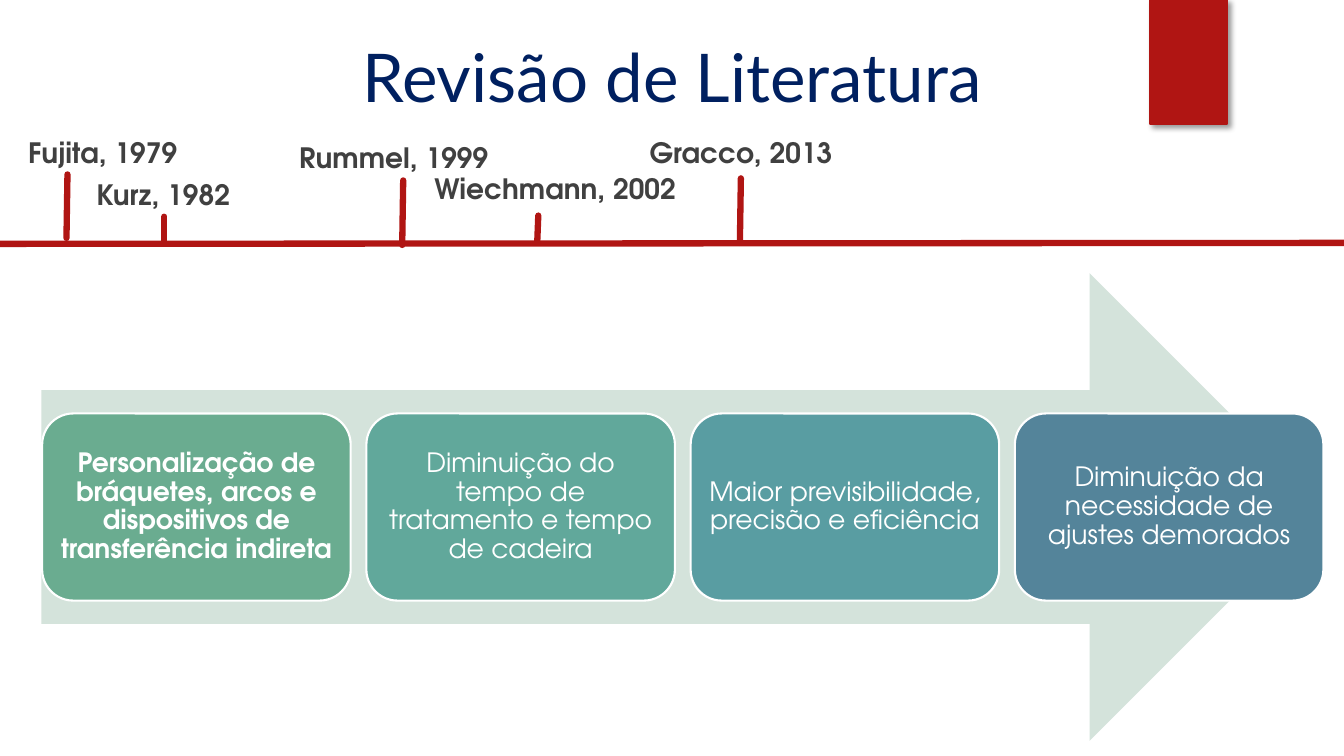
import pptx
import pptx.util
import pptx.dml.color
import pptx.enum.shapes
import pptx.enum.text
import pptx.oxml
import pptx.oxml.ns

Pt = pptx.util.Pt
KIND = pptx.enum.shapes.MSO_SHAPE
ALIGN = pptx.enum.text.PP_ALIGN
MIDDLE = pptx.enum.text.MSO_ANCHOR.MIDDLE
FIT = pptx.enum.text.MSO_AUTO_SIZE.SHAPE_TO_FIT_TEXT
FONT = "TeX Gyre Adventor"
HUES = {
    "title": "002060", "red": "B01513", "label": "404040",
    "arrow": "D4E3DB", "white": "FFFFFF",
}
EVENTS = [
    ("Fujita, 1979", 13, 92.9, 145, ALIGN.LEFT, (47.5, 170, 48.2, 124.6)),
    ("Kurz, 1982", 62, 123.1, 145, ALIGN.LEFT, (117.4, 173.5, 117.4, 154.8)),
    ("Rummel, 1999", 206.6, 96.5, 156, ALIGN.LEFT, (287.3, 175, 288, 128.9)),
    ("Wiechmann, 2002", 303.1, 118.8, 198, ALIGN.LEFT, (383.8, 172, 384.5, 154)),
    ("Gracco, 2013", 451.4, 92.9, 156, ALIGN.CENTER, (528.5, 173.5, 529.2, 127.4)),
]
STEPS = [
    ("Personalização de bráquetes, arcos e dispositivos de transferência indireta", "6AAC90", True),
    ("Diminuição do tempo de tratamento e tempo de cadeira", "61A89B", False),
    ("Maior previsibilidade, precisão e eficiência", "599DA2", False),
    ("Diminuição da necessidade de ajustes demorados", "54849A", False),
]


def tint(hue):
    return pptx.dml.color.RGBColor.from_string(hue)


def write(frame, text, size, hue, face=FONT, bold=False, align=ALIGN.CENTER):
    frame.word_wrap = True
    para = frame.paragraphs[0]
    para.alignment = align
    run = para.add_run()
    run.text = text
    font = run.font
    font.name, font.size, font.bold = face, Pt(size), bold
    font.color.rgb = tint(hue)
    return para


def block(slide, kind, box, fill, edge=None):
    shape = slide.shapes.add_shape(kind, *map(Pt, box))
    shape.shadow.inherit = False
    shape.fill.solid()
    shape.fill.fore_color.rgb = tint(fill)
    if edge:
        shape.line.color.rgb = tint(edge)
        shape.line.width = Pt(1.5)
    else:
        shape.line.fill.background()
    return shape


def stroke(slide, ends):
    line = slide.shapes.add_connector(
        pptx.enum.shapes.MSO_CONNECTOR.STRAIGHT, *map(Pt, ends))
    line.line.color.rgb = tint(HUES["red"])
    line.line.width = Pt(4.5)
    line.line._get_or_add_ln().set("cap", "rnd")
    props = line._element.spPr
    props.append(props.makeelement(pptx.oxml.ns.qn("a:effectLst"), {}))


def head(slide, box):
    title = slide.shapes.title
    title.left, title.top, title.width, title.height = map(Pt, box)
    frame = title.text_frame
    frame.auto_size = FIT
    frame.vertical_anchor = MIDDLE
    write(frame, "Revisão de Literatura", 48, HUES["title"], "Lato")


def ribbon(slide, box):
    flag = block(slide, KIND.RECTANGLE, box, HUES["red"], HUES["red"])
    glow = pptx.oxml.parse_xml(
        f'<a:outerShdw {pptx.oxml.ns.nsdecls("a")} blurRad="{Pt(4)}" dist="{Pt(3)}" '
        'dir="2700000" algn="tl" rotWithShape="0"><a:srgbClr val="000000">'
        '<a:alpha val="40000"/></a:srgbClr></a:outerShdw>')
    flag._element.spPr.find(pptx.oxml.ns.qn("a:effectLst")).append(glow)


def dates(slide, box):
    left, top, width, drop = box
    stroke(slide, (left, top + drop, left + width, top + drop - 0.7))
    for text, x, y, wide, align, ends in EVENTS:
        stroke(slide, [at + shift for at, shift in zip(ends, (left, top) * 2)])
        label = slide.shapes.add_textbox(Pt(left + x), Pt(top + y), Pt(wide), Pt(31.5))
        label.text_frame.auto_size = FIT
        write(label.text_frame, text, 20, HUES["label"], bold=True, align=align)


def process(slide, box):
    left, top, width, height = box
    block(slide, KIND.RIGHT_ARROW, box, HUES["arrow"])
    wide, tall = 220.4, height * 0.4
    pitch = (width - wide - 0.6) / (len(STEPS) - 1)
    for i, (text, hue, bold) in enumerate(STEPS):
        spot = (left + 0.6 + i * pitch, top + height * 0.3, wide, tall)
        card = block(slide, KIND.ROUNDED_RECTANGLE, spot, hue, HUES["white"])
        frame = card.text_frame
        frame.vertical_anchor = MIDDLE
        frame.margin_left = frame.margin_right = Pt(6)
        frame.margin_top = frame.margin_bottom = Pt(6)
        write(frame, text, 19, HUES["white"], bold=bold).line_spacing = 0.9


def main():
    deck = pptx.Presentation()
    deck.slide_width, deck.slide_height = Pt(960), Pt(540)
    slide = deck.slides.add_slide(deck.slide_layouts[5])
    head(slide, (0, 21.6, 960, 65.5))
    ribbon(slide, (821.5, 0, 54.7, 88.6))
    dates(slide, (0, 0, 960, 174.2))
    process(slide, (29.5, 195.1, 915.8, 334.1))
    deck.save("out.pptx")


if __name__ == "__main__":
    main()
